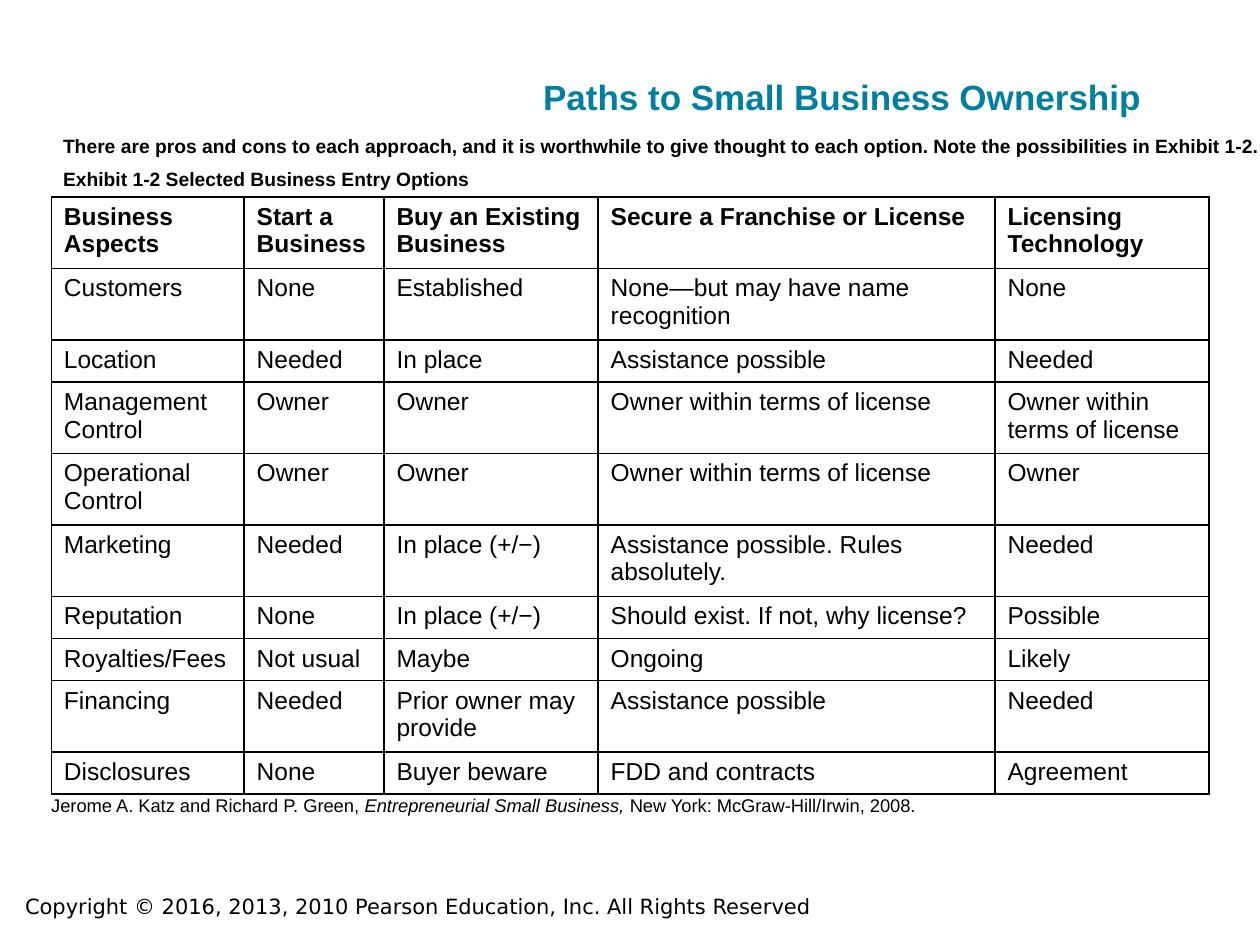
"""Build the slide on paths to small business ownership."""
from dataclasses import dataclass

from lxml import etree
from pptx import Presentation
from pptx import util as u
from pptx.dml.color import RGBColor
from pptx.enum import text
from pptx.oxml import ns


@dataclass(frozen=True)
class Theme:
    """Colours, fonts and type sizes of the slide."""

    accent: str = "007FA3"
    ink: str = "000000"
    paper: str = "FFFFFF"
    font: str = "Arial"
    footer_font: str = "DejaVu Sans"
    title_size: float = 20
    intro_size: float = 11
    table_size: float = 14
    source_size: float = 10.5
    footer_size: float = 12


THEME = Theme()
MARGIN_X, MARGIN_Y = 7.2, 3.6
ONE_LINE, TWO_LINES = 23, 38.75
COLUMN_WIDTHS = [110.2, 79.9, 122.4, 226.8, 122.4]
ROW_HEIGHTS = [
    TWO_LINES, TWO_LINES, ONE_LINE, TWO_LINES, TWO_LINES,
    TWO_LINES, ONE_LINE, ONE_LINE, TWO_LINES, ONE_LINE,
]
ENTRY_OPTIONS = [
    ["Business Aspects", "Start a Business", "Buy an Existing\nBusiness",
     "Secure a Franchise or License", "Licensing Technology"],
    ["Customers", "None", "Established", "None—but may have name recognition", "None"],
    ["Location", "Needed", "In place", "Assistance possible", "Needed"],
    ["Management\nControl", "Owner", "Owner", "Owner within terms of license",
     "Owner within terms of license"],
    ["Operational Control", "Owner", "Owner", "Owner within terms of license", "Owner"],
    ["Marketing", "Needed", "In place (+/−)", "Assistance possible. Rules absolutely.", "Needed"],
    ["Reputation", "None", "In place (+/−)", "Should exist. If not, why license?", "Possible"],
    ["Royalties/Fees", "Not usual", "Maybe", "Ongoing", "Likely"],
    ["Financing", "Needed", "Prior owner may provide", "Assistance possible", "Needed"],
    ["Disclosures", "None", "Buyer beware", "FDD and contracts", "Agreement"],
]


def format_text(frame, size, bold=False, color=THEME.ink, font=THEME.font):
    """Left-align a text frame and give all its runs one look."""
    for paragraph in frame.paragraphs:
        paragraph.alignment = text.PP_ALIGN.LEFT
        for run in paragraph.runs:
            run.font.name = font
            run.font.size = u.Pt(size)
            run.font.bold = bold
            run.font.color.rgb = RGBColor.from_string(color)


def set_margins(item, horizontal, vertical):
    """Set the inner margins of a text frame or a table cell."""
    item.margin_left = item.margin_right = u.Pt(horizontal)
    item.margin_top = item.margin_bottom = u.Pt(vertical)


def set_title(slide, title, left, top, width, height):
    """Move, fill and format the title placeholder."""
    shape = slide.shapes.title
    shape.left, shape.top, shape.width, shape.height = map(u.Pt, (left, top, width, height))
    frame = shape.text_frame
    frame.text = title
    frame.auto_size = text.MSO_AUTO_SIZE.NONE
    frame.vertical_anchor = text.MSO_ANCHOR.BOTTOM
    set_margins(frame, 0, 0)
    format_text(frame, THEME.title_size, bold=True, color=THEME.accent)


def add_text(slide, content, left, top, width, height, margins=(0, 0)):
    """Add a wrapping text box and return its text frame."""
    box = slide.shapes.add_textbox(*map(u.Pt, (left, top, width, height)))
    frame = box.text_frame
    frame.word_wrap = True
    set_margins(frame, *margins)
    frame.text = content
    return frame


def add_source(slide, parts, left, top, width, height):
    """Add the citation, with every second part in italics."""
    frame = add_text(slide, "", left, top, width, height)
    for index, part in enumerate(parts):
        run = frame.paragraphs[0].add_run()
        run.text = part
        run.font.italic = index % 2 == 1
    format_text(frame, THEME.source_size)


def set_borders(cell):
    """Draw a thin line on each side of a table cell."""
    properties = cell._tc.get_or_add_tcPr()
    for side in ("a:lnL", "a:lnR", "a:lnT", "a:lnB"):
        line = etree.SubElement(properties, ns.qn(side), w=str(u.Pt(1)))
        fill = etree.SubElement(line, ns.qn("a:solidFill"))
        etree.SubElement(fill, ns.qn("a:srgbClr"), val=THEME.ink)


def format_cell(cell, content, bold):
    """Fill one table cell and give it its look."""
    cell.text = content
    set_margins(cell, MARGIN_X, MARGIN_Y)
    set_borders(cell)
    cell.fill.solid()
    cell.fill.fore_color.rgb = RGBColor.from_string(THEME.paper)
    format_text(cell.text_frame, THEME.table_size, bold=bold)


def add_options_table(slide, rows, left, top):
    """Add the table of entry options under a bold header row."""
    size = sum(COLUMN_WIDTHS), sum(ROW_HEIGHTS)
    frame = slide.shapes.add_table(
        len(rows), len(COLUMN_WIDTHS), *map(u.Pt, (left, top, *size)))
    table = frame.table
    for column, width in zip(table.columns, COLUMN_WIDTHS):
        column.width = u.Pt(width)
    for row, height in zip(table.rows, ROW_HEIGHTS):
        row.height = u.Pt(height)
    for row_index, row in enumerate(rows):
        for column_index, content in enumerate(row):
            format_cell(table.cell(row_index, column_index), content, row_index == 0)


def main():
    """Build and save the presentation."""
    presentation = Presentation()
    presentation.slide_width, presentation.slide_height = u.Pt(720), u.Pt(540)
    slide = presentation.slides.add_slide(presentation.slide_layouts[5])

    footer = add_text(
        slide, "Copyright © 2016, 2013, 2010 Pearson Education, Inc. All Rights Reserved",
        7.2, 507, 564, 21.6, margins=(MARGIN_X, MARGIN_Y))
    format_text(footer, THEME.footer_size, font=THEME.footer_font)

    set_title(slide, "Paths to Small Business Ownership", 310.3, 23.8, 648, 43.2)

    intro = add_text(
        slide,
        "There are pros and cons to each approach, and it is worthwhile to give thought "
        "to each option. Note the possibilities in Exhibit 1-2.\n"
        "Exhibit 1-2 Selected Business Entry Options",
        36, 76.5, 876, 57)
    format_text(intro, THEME.intro_size, bold=True)
    intro.paragraphs[1].space_before = u.Pt(6)

    add_options_table(slide, ENTRY_OPTIONS, 29.3, 112.5)
    add_source(
        slide,
        ["Jerome A. Katz and Richard P. Green, ", "Entrepreneurial Small Business, ",
         "New York: McGraw-Hill/Irwin, 2008."],
        29.3, 453.6, 715, 19.4)
    presentation.save("out.pptx")


if __name__ == "__main__":
    main()
